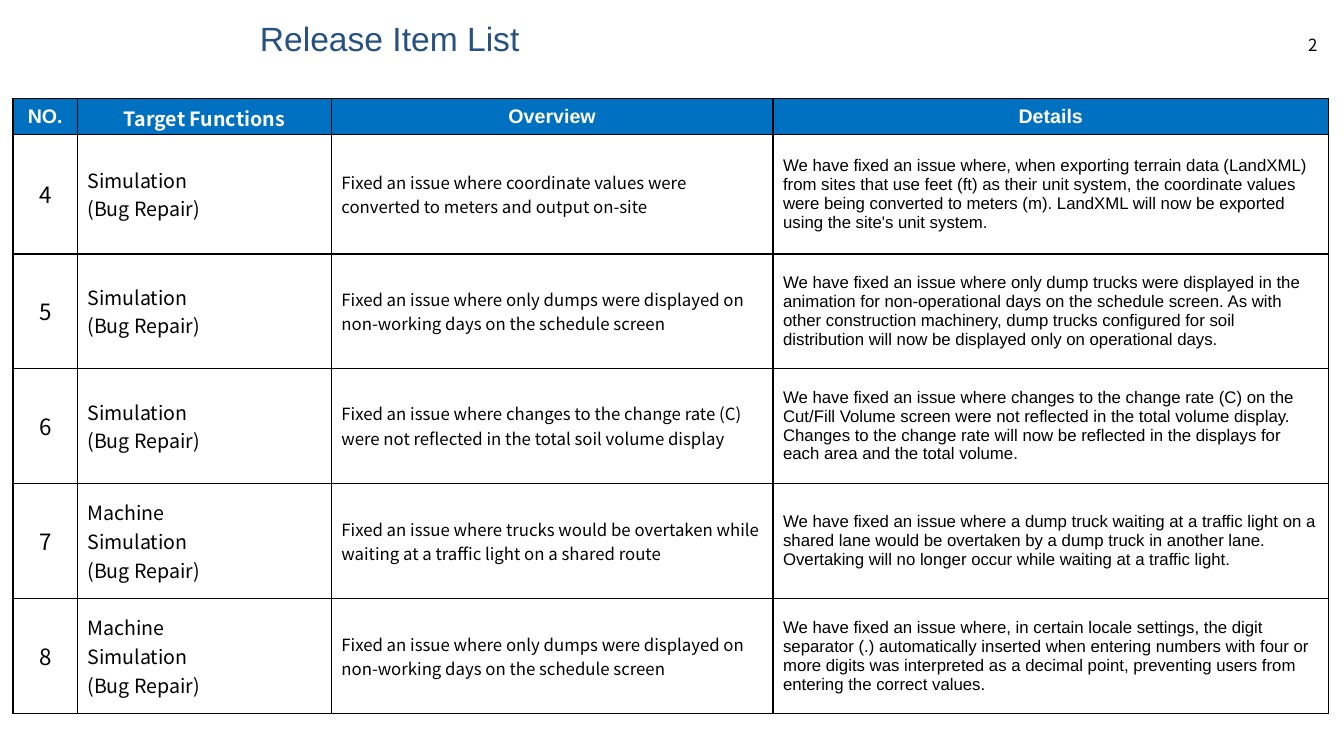
import pptx
import pptx.util
import pptx.dml.color
import pptx.enum.text
import pptx.oxml
import pptx.oxml.ns
from dataclasses import dataclass

Cm, Pt = pptx.util.Cm, pptx.util.Pt
RGB = pptx.dml.color.RGBColor.from_string
Align = pptx.enum.text.PP_ALIGN
Anchor = pptx.enum.text.MSO_ANCHOR


@dataclass
class Theme:
    arial: str = "Arial"
    noto: str = "Noto Sans CJK JP"
    black: str = "000000"
    white: str = "FFFFFF"
    navy: str = "265180"
    blue: str = "0070C0"
    title: int = 24
    num: int = 16
    head: int = 14
    body: int = 12
    line: int = 1


theme = Theme()


def write(frame, text, font=theme.noto, size=theme.body, color=theme.black,
          bold=False, align=Align.LEFT, space=None):
    frame.word_wrap = True
    frame.vertical_anchor = Anchor.MIDDLE
    frame.text = text
    for para in frame.paragraphs:
        para.alignment = align
        para.line_spacing = space
        for run in para.runs:
            run.font.name = font
            run.font.size = Pt(size)
            run.font.bold = bold
            run.font.color.rgb = RGB(color)


def border(cell):
    """Draw a line on all four sides of the cell."""
    props = cell._tc.get_or_add_tcPr()
    for i, side in enumerate(("lnL", "lnR", "lnT", "lnB")):
        props.insert(i, pptx.oxml.parse_xml(
            f'<a:{side} {pptx.oxml.ns.nsdecls("a")} w="{Pt(theme.line)}">'
            f'<a:solidFill><a:srgbClr val="{theme.black}"/></a:solidFill></a:{side}>'))


deck = pptx.Presentation()
deck.slide_width, deck.slide_height = Cm(33.87), Cm(19.05)
slide = deck.slides.add_slide(deck.slide_layouts[6])

page = slide.shapes.add_textbox(Cm(31.7), Cm(0.76), Cm(1.75), Cm(0.76))
write(page.text_frame, "2", align=Align.RIGHT)
title = slide.shapes.add_textbox(Cm(6.3), Cm(0.5), Cm(22.66), Cm(1.07))
write(title.text_frame, "Release Item List", font=theme.arial,
      size=theme.title, color=theme.navy, space=0.9)

# "\v" breaks a line, "\n" starts a paragraph
items = [
    ("4", "Simulation\v(Bug Repair)",
     "Fixed an issue where coordinate values were converted to meters and output on-site",
     "We have fixed an issue where, when exporting terrain data (LandXML) from sites that "
     "use feet (ft) as their unit system, the coordinate values were being converted to "
     "meters (m). LandXML will now be exported using the site's unit system."),
    ("5", "Simulation\n(Bug Repair)",
     "Fixed an issue where only dumps were displayed on non-working days on the schedule screen",
     "We have fixed an issue where only dump trucks were displayed in the animation for "
     "non-operational days on the schedule screen. As with other construction machinery, "
     "dump trucks configured for soil distribution will now be displayed only on "
     "operational days."),
    ("6", "Simulation\v(Bug Repair)",
     "Fixed an issue where changes to the change rate (C) were not reflected in the total "
     "soil volume display",
     "We have fixed an issue where changes to the change rate (C) on the Cut/Fill Volume "
     "screen were not reflected in the total volume display. Changes to the change rate "
     "will now be reflected in the displays for each area and the total volume."),
    ("7", "Machine\nSimulation\v(Bug Repair)",
     "Fixed an issue where trucks would be overtaken while waiting at a traffic light on a "
     "shared route",
     "We have fixed an issue where a dump truck waiting at a traffic light on a shared lane "
     "would be overtaken by a dump truck in another lane. Overtaking will no longer occur "
     "while waiting at a traffic light."),
    ("8", "Machine\nSimulation\v(Bug Repair)",
     "Fixed an issue where only dumps were displayed on non-working days on the schedule screen",
     "We have fixed an issue where, in certain locale settings, the digit separator (.) "
     "automatically inserted when entering numbers with four or more digits was interpreted "
     "as a decimal point, preventing users from entering the correct values."),
]
heads = ("NO.", "Target Functions", "Overview", "Details")
fonts = (theme.arial, theme.noto, theme.arial, theme.arial)
looks = (
    dict(size=theme.num, align=Align.CENTER),
    dict(size=theme.head),
    dict(),
    dict(font=theme.arial),
)
widths = (1.62, 6.4, 11.13, 14)
heights = (0.89, 3.02, 2.88, 2.9, 2.9, 2.9)

table = slide.shapes.add_table(len(heights), len(widths), Cm(0.33), Cm(2.49),
                               Cm(sum(widths)), Cm(sum(heights))).table
table.horz_banding = False
for col, width in zip(table.columns, widths):
    col.width = Cm(width)
for row, height in zip(table.rows, heights):
    row.height = Cm(height)

for r, texts in enumerate([heads] + items):
    for c, text in enumerate(texts):
        cell = table.cell(r, c)
        look = looks[c]
        if r == 0:
            look = dict(font=fonts[c], size=theme.head, color=theme.white,
                        bold=True, align=Align.CENTER)
        write(cell.text_frame, text, **look)
        cell.vertical_anchor = Anchor.MIDDLE
        cell.fill.solid()
        cell.fill.fore_color.rgb = RGB(theme.white if r else theme.blue)
        border(cell)

deck.save("out.pptx")
